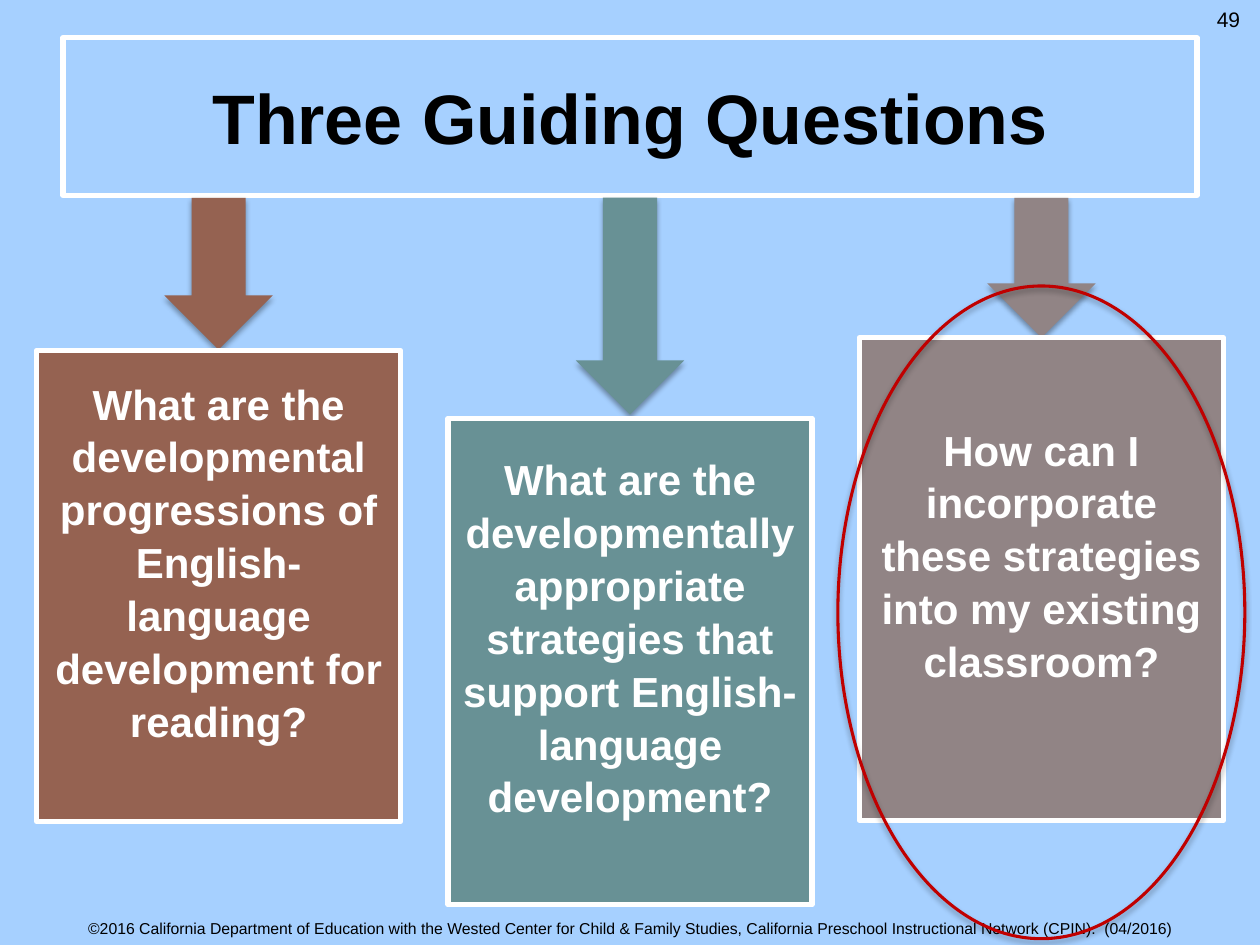
from dataclasses import dataclass
from typing import Any

from lxml import etree
from pptx import Presentation
from pptx import util as u
from pptx.dml.color import RGBColor
from pptx.enum import shapes, text
from pptx.oxml import ns

SKY = RGBColor(0xA6, 0xD0, 0xFF)
BROWN = RGBColor(0x95, 0x62, 0x51)
TEAL = RGBColor(0x68, 0x91, 0x95)
TAUPE = RGBColor(0x91, 0x84, 0x85)
RED = RGBColor(0xC0, 0x00, 0x00)
WHITE = RGBColor(0xFF, 0xFF, 0xFF)
BLACK = RGBColor(0x00, 0x00, 0x00)

SLIDE_WIDTH, SLIDE_HEIGHT = u.Inches(10), u.Inches(7.5)
COLUMN_LEFT, COLUMN_PITCH, COLUMN_WIDTH = 2.9, 32.65, 28.9
ARROW_TOP = 20.93
ARROW_BREADTH = u.Inches(0.86)


@dataclass
class Question:
    column: int
    top: float
    height: float
    arrow_tip: float
    color: RGBColor
    wording: str


@dataclass
class Caption:
    box: tuple[float, float, float, float]
    size: int
    anchor: Any
    wording: str


QUESTIONS = [
    Question(2, 35.73, 51.07, 35.73, TAUPE,
             "How can I incorporate these strategies into my existing classroom?"),
    Question(1, 44.27, 51.47, 43.87, TEAL,
             "What are the developmentally appropriate strategies that support "
             "English-language development?"),
    Question(0, 37.07, 49.87, 37.0, BROWN,
             "What are the developmental progressions of English-language "
             "development for reading?"),
]

CAPTIONS = [
    Caption((0, 96.53, 100, 3.47), 9, text.MSO_ANCHOR.MIDDLE,
            "©2016 California Department of Education with the Wested Center for "
            "Child & Family Studies, California Preschool Instructional Network "
            "(CPIN).  (04/2016)"),
    Caption((95, 0, 5, 5.33), 12, text.MSO_ANCHOR.TOP, "49"),
]


def across(percent: float) -> int:
    return round(SLIDE_WIDTH * percent / 100)


def down(percent: float) -> int:
    return round(SLIDE_HEIGHT * percent / 100)


def place(left: float, top: float, width: float, height: float) -> tuple:
    return across(left), down(top), across(width), down(height)


def apply(target: Any, values: dict) -> None:
    for name, value in values.items():
        setattr(target, name, value)


def write(shape: Any, wording: str, size: int, color: RGBColor, bold: bool,
          frame_format: dict, paragraph_format: dict) -> None:
    frame = shape.text_frame
    apply(frame, {"word_wrap": True, **frame_format})
    paragraph = frame.paragraphs[0]
    paragraph.text = wording
    apply(paragraph, {"alignment": text.PP_ALIGN.CENTER, **paragraph_format})
    apply(paragraph.font, {"name": "Arial", "size": u.Pt(size), "bold": bold})
    paragraph.font.color.rgb = color


def outline(shape: Any, color: RGBColor, width: float) -> None:
    shape.line.color.rgb = color
    shape.line.width = u.Pt(width)


def add_shadow(shape: Any) -> None:
    shape.shadow.inherit = False
    effects = shape._element.spPr.find(ns.qn("a:effectLst"))
    shadow = etree.SubElement(effects, ns.qn("a:outerShdw"), blurRad="40000",
                              dist="23000", dir="5400000", rotWithShape="0")
    color = etree.SubElement(shadow, ns.qn("a:srgbClr"), val="000000")
    etree.SubElement(color, ns.qn("a:alpha"), val="35000")


def add_arrow(slide: Any, question: Question) -> None:
    column_left = COLUMN_LEFT + question.column * COLUMN_PITCH
    center_x = across(column_left + COLUMN_WIDTH / 2)
    center_y = down((ARROW_TOP + question.arrow_tip) / 2)
    length = down(question.arrow_tip - ARROW_TOP)
    arrow = slide.shapes.add_shape(
        shapes.MSO_SHAPE.RIGHT_ARROW, center_x - length // 2,
        center_y - ARROW_BREADTH // 2, length, ARROW_BREADTH)
    arrow.rotation = 90
    arrow.fill.solid()
    arrow.fill.fore_color.rgb = question.color
    arrow.line.fill.background()
    add_shadow(arrow)


def add_question(slide: Any, question: Question) -> None:
    left = COLUMN_LEFT + question.column * COLUMN_PITCH
    box = slide.shapes.add_shape(
        shapes.MSO_SHAPE.RECTANGLE,
        *place(left, question.top, COLUMN_WIDTH, question.height))
    box.shadow.inherit = False
    box.fill.solid()
    box.fill.fore_color.rgb = question.color
    outline(box, WHITE, 3)
    write(box, question.wording, 24, WHITE, True,
          {"vertical_anchor": text.MSO_ANCHOR.MIDDLE,
           "margin_bottom": u.Inches(0.45)},
          {"line_spacing": 1.05})


def add_caption(slide: Any, caption: Caption) -> None:
    box = slide.shapes.add_textbox(*place(*caption.box))
    write(box, caption.wording, caption.size, BLACK, False,
          {"vertical_anchor": caption.anchor}, {})


def add_title(slide: Any) -> None:
    title = slide.shapes.title
    left, top, width, height = place(5, 4, 90, 16.67)
    apply(title, {"left": left, "top": top, "width": width, "height": height})
    outline(title, WHITE, 3)
    write(title, "Three Guiding Questions", 40, BLACK, True,
          {"vertical_anchor": text.MSO_ANCHOR.MIDDLE}, {})


def add_highlight(slide: Any) -> None:
    ring = slide.shapes.add_shape(shapes.MSO_SHAPE.FLOWCHART_CONNECTOR,
                                  *place(66.5, 30.27, 32.3, 69.07))
    ring.fill.background()
    outline(ring, RED, 1.75)
    add_shadow(ring)


def main() -> None:
    presentation = Presentation()
    apply(presentation, {"slide_width": SLIDE_WIDTH, "slide_height": SLIDE_HEIGHT})
    slide = presentation.slides.add_slide(presentation.slide_layouts[5])
    slide.background.fill.solid()
    slide.background.fill.fore_color.rgb = SKY
    add_title(slide)
    for question in QUESTIONS:
        add_arrow(slide, question)
    for question in reversed(QUESTIONS):
        add_question(slide, question)
    for caption in CAPTIONS:
        add_caption(slide, caption)
    add_highlight(slide)
    presentation.save("out.pptx")


if __name__ == "__main__":
    main()
